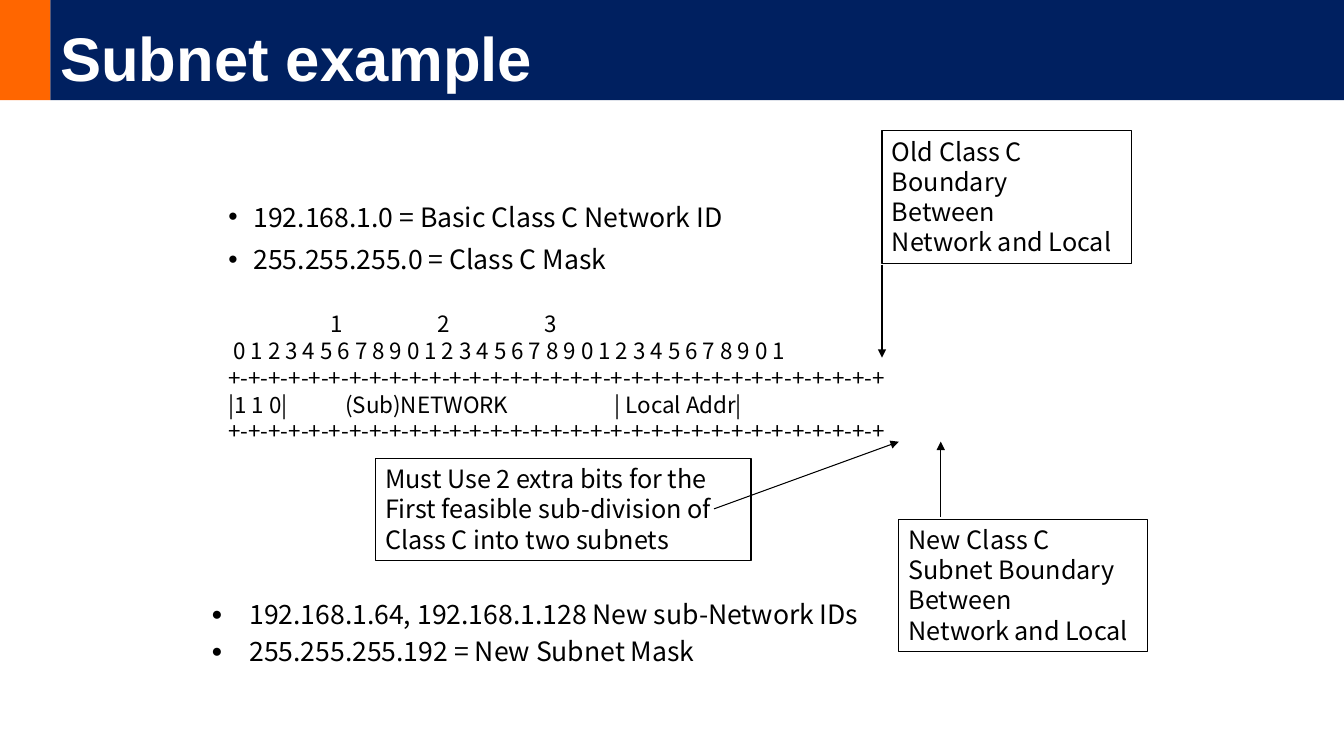
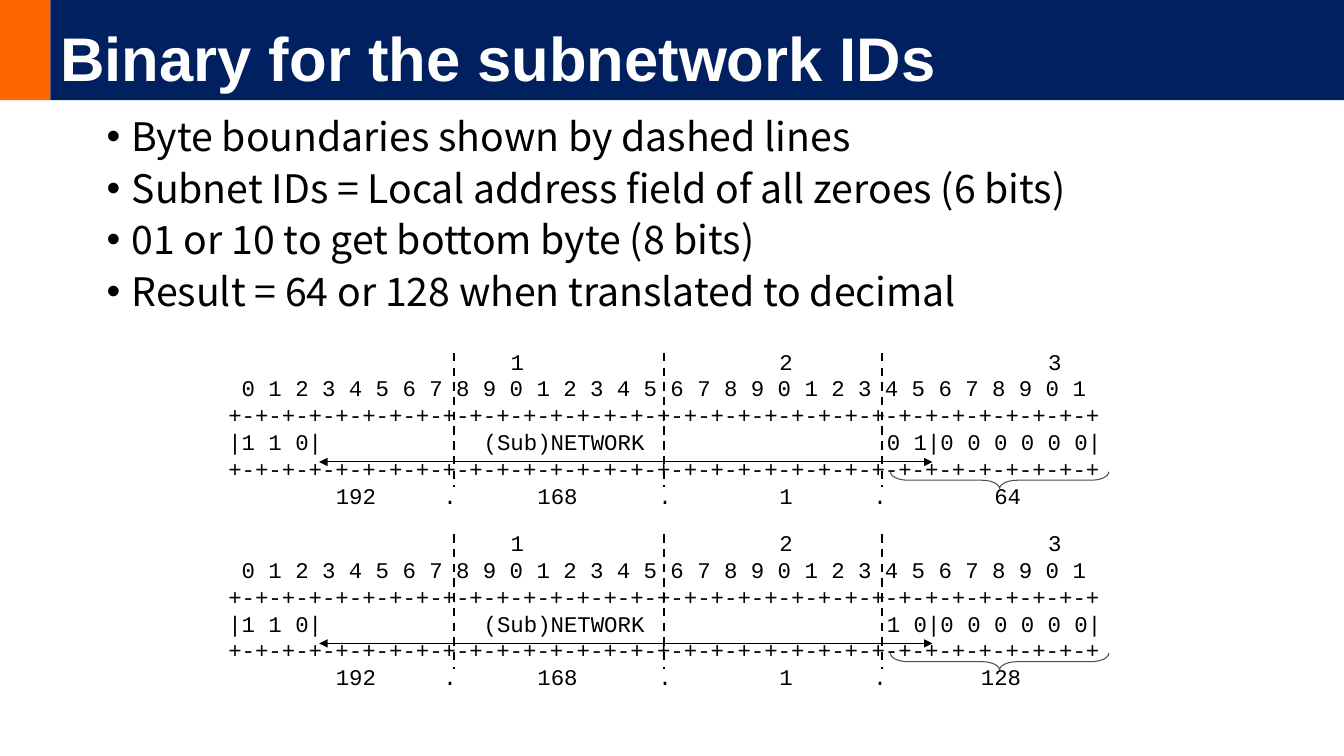
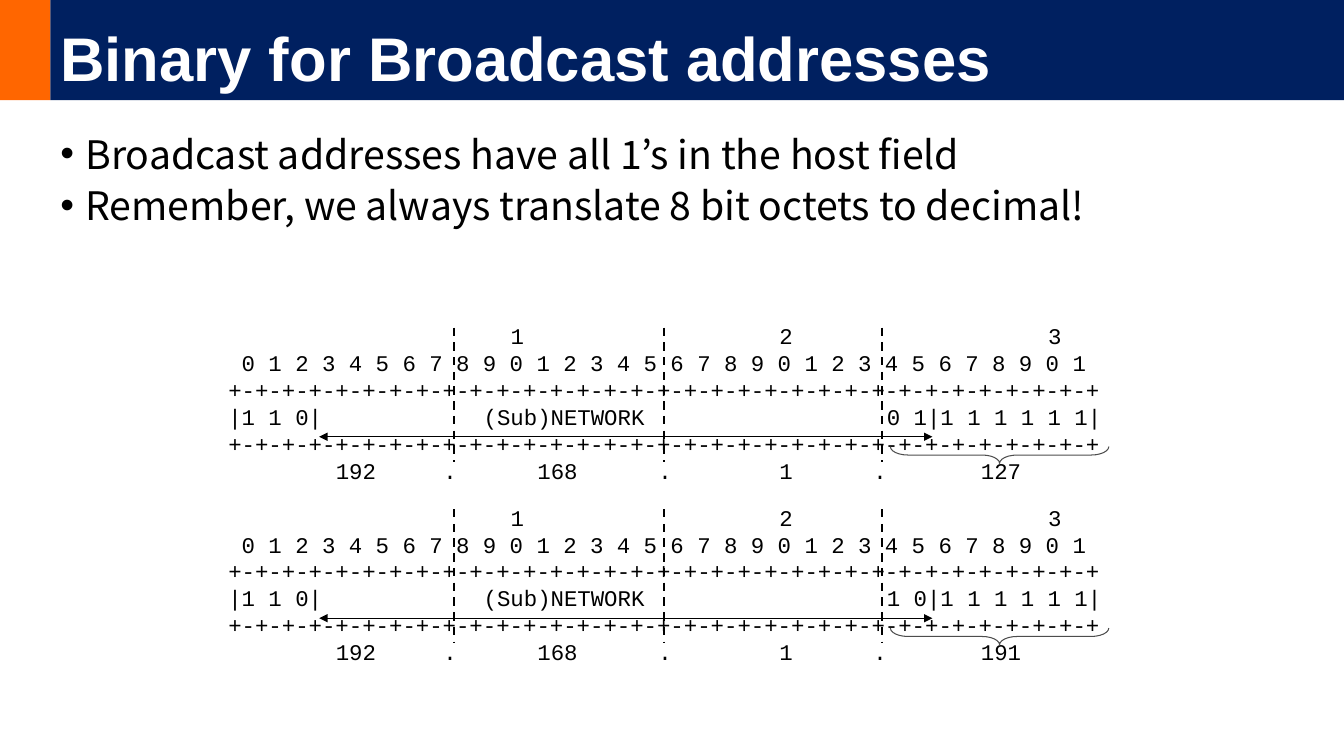
from lxml import etree
from pptx import Presentation
from pptx import util as u
from pptx.dml.color import RGBColor
from pptx.enum import dml, shapes, text
from pptx.oxml import ns

Pt = u.Pt
COLORS = {"navy": "002060", "orange": "FF6600", "white": "FFFFFF", "black": "000000", "brace": "4D4D4D"}
SANS, MONO, TITLE = "Noto Sans CJK KR", "Courier New", "Arial"
SLIDE_WIDTH, BAND_HEIGHT, ACCENT_WIDTH = 960, 71.5, 36
CHAR_WIDTH = 9.6
RULER = " " + " ".join(str(bit % 10) for bit in range(32))
BORDER = "+-" * 32 + "+"


def add_text(slide, box, lines, size, font=SANS, spacing=1.2, before=0, bullet=None, indent=0, tabs=None, outlined=False):
    shape = slide.shapes.add_textbox(*[Pt(value) for value in box])
    shape.text_frame.word_wrap = True
    shape.text_frame.text = "\n".join(lines)
    if outlined:
        shape.line.color.rgb = RGBColor.from_string(COLORS["black"])
        shape.line.width = Pt(0.75)
    for index, paragraph in enumerate(shape.text_frame.paragraphs):
        paragraph.line_spacing = Pt(round(size * spacing, 2))
        paragraph.space_before = Pt(before)
        properties = paragraph._p.get_or_add_pPr()
        if bullet:
            symbol, percent = bullet
            properties.set("marL", str(Pt(indent)))
            properties.set("indent", str(-Pt(indent)))
            etree.SubElement(properties, ns.qn("a:buSzPct"), val=str(percent * 1000))
            etree.SubElement(properties, ns.qn("a:buFont"), typeface=TITLE)
            etree.SubElement(properties, ns.qn("a:buChar"), char=symbol)
        if tabs and index in tabs:
            tab_list = etree.SubElement(properties, ns.qn("a:tabLst"))
            for position in tabs[index]:
                etree.SubElement(tab_list, ns.qn("a:tab"), pos=str(Pt(position)), algn="l")
        for run in paragraph.runs:
            run.font.size = Pt(size)
            run.font.name = font
            run.font.color.rgb = RGBColor.from_string(COLORS["black"])


def add_line(slide, start, end, width=0.75, dashed=False, arrows=()):
    connector = slide.shapes.add_connector(shapes.MSO_CONNECTOR.STRAIGHT, *[Pt(value) for value in start + end])
    connector.line.color.rgb = RGBColor.from_string(COLORS["black"])
    connector.line.width = Pt(width)
    if dashed:
        connector.line.dash_style = dml.MSO_LINE.DASH
    for arrow in arrows:
        etree.SubElement(connector.line._get_or_add_ln(), ns.qn("a:" + arrow), type="triangle")
    etree.SubElement(connector._element.spPr, ns.qn("a:effectLst"))


presentation = Presentation()
presentation.slide_width = Pt(SLIDE_WIDTH)
presentation.slide_height = Pt(540)

slides = []
for title in ["Subnet example", "Binary for the subnetwork IDs", "Binary for Broadcast addresses"]:
    slide = presentation.slides.add_slide(presentation.slide_layouts[6])
    slides.append(slide)
    for left, width, color in [(0, ACCENT_WIDTH, "orange"), (ACCENT_WIDTH, SLIDE_WIDTH - ACCENT_WIDTH, "navy")]:
        band = slide.shapes.add_shape(shapes.MSO_SHAPE.RECTANGLE, Pt(left), Pt(0), Pt(width), Pt(BAND_HEIGHT))
        band.shadow.inherit = False
        band.fill.solid()
        band.fill.fore_color.rgb = RGBColor.from_string(COLORS[color])
        band.line.fill.background()
    band.text_frame.text = title
    band.text_frame.word_wrap = True
    band.text_frame.vertical_anchor = text.MSO_ANCHOR.BOTTOM
    paragraph = band.text_frame.paragraphs[0]
    paragraph.alignment = text.PP_ALIGN.LEFT
    paragraph.line_spacing = 0.9
    font = paragraph.runs[0].font
    font.size, font.name, font.bold = Pt(44), TITLE, True
    font.color.rgb = RGBColor.from_string(COLORS["white"])

subnet, subnet_ids, broadcast = slides

add_text(subnet, (156, 142, 462, 84),
         ["192.168.1.0 = Basic Class C Network ID", "255.255.255.0 = Class C Mask"],
         19, spacing=1.08, before=10, bullet=("•", 100), indent=18)
add_text(subnet, (156, 218, 562, 124),
         ["\t1\t2\t3", RULER, BORDER, "|1 1 0|\t(Sub)NETWORK\t| Local Addr|", BORDER],
         16, tabs={0: (73, 149.5, 226), 3: (83.5, 276)})
for box, lines in [
    ((630, 93.5, 178, 94.5), ["Old Class C", "Boundary", "Between", "Network and Local"]),
    ((642, 371, 178, 94.5), ["New Class C", "Subnet Boundary", "Between", "Network and Local"]),
    ((268, 327.5, 268.5, 73), ["Must Use 2 extra bits for the", "First feasible sub-division of", "Class C into two subnets"]),
]:
    add_text(subnet, box, lines, 18, outlined=True)
for start, end in [((630, 189), (630, 255.5)), ((672, 369), (672, 315.5)), ((510, 363.5), (642, 315.5))]:
    add_line(subnet, start, end, arrows=["tailEnd"])
add_text(subnet, (144, 423.5, 498, 102),
         ["192.168.1.64, 192.168.1.128 New sub-Network IDs", "255.255.255.192 = New Subnet Mask"],
         19, before=3.8, bullet=("●", 70), indent=27)

for slide, box, lines in [
    (subnet_ids, (69, 83.5, 824, 126), [
        "Byte boundaries shown by dashed lines",
        "Subnet IDs = Local address field of all zeroes (6 bits)",
        "01 or 10 to get bottom byte (8 bits)",
        "Result = 64 or 128 when translated to decimal"]),
    (broadcast, (36, 96, 876, 70), [
        "Broadcast addresses have all 1’s in the host field",
        "Remember, we always translate 8 bit octets to decimal!"]),
]:
    add_text(slide, box, lines, 28, spacing=0.96, before=10, bullet=("•", 100), indent=18)

tab_columns = {0: (21, 41, 61), 3: (19, 49)}
for slide, first_top, host_bit, last_bytes in [
    (subnet_ids, 252, "0", ("64", "128")),
    (broadcast, 234, "1", ("127", "191")),
]:
    host = " ".join(host_bit * 6)
    for index, (subnet_bits, last_byte) in enumerate(zip(("0 1", "1 0"), last_bytes)):
        top = first_top + 129.6 * index
        columns = {**tab_columns, 5: (8, 16, 23, 32, 41, 48, 59 - len(last_byte))}
        if len(last_byte) == 2:
            columns[5] = columns[5][:-1] + (57,)
        add_text(slide, (156, top - 7.2, 650, 122.5),
                 ["\t1\t2\t3", RULER, BORDER,
                  f"|1 1 0|\t(Sub)NETWORK\t{subnet_bits}|{host}|", BORDER,
                  f"\t192\t.\t168\t.\t1\t.\t{last_byte}"],
                 16, font=MONO,
                 tabs={row: [round(column * CHAR_WIDTH, 2) for column in stops] for row, stops in columns.items()})
        for boundary in (630, 474, 324):
            add_line(slide, (boundary, top), (boundary, top + 96), width=1.5, dashed=True)
        add_line(slide, (228, top + 78), (666, top + 78), arrows=["headEnd", "tailEnd"])
        brace = slide.shapes.add_shape(shapes.MSO_SHAPE.LEFT_BRACE, Pt(708), Pt(top + 13), Pt(12), Pt(156))
        brace.rotation = 270
        brace.adjustments[0] = 1.05
        brace.shadow.inherit = False
        brace.fill.background()
        brace.line.color.rgb = RGBColor.from_string(COLORS["brace"])
        brace.line.width = Pt(0.75)

presentation.save("out.pptx")
